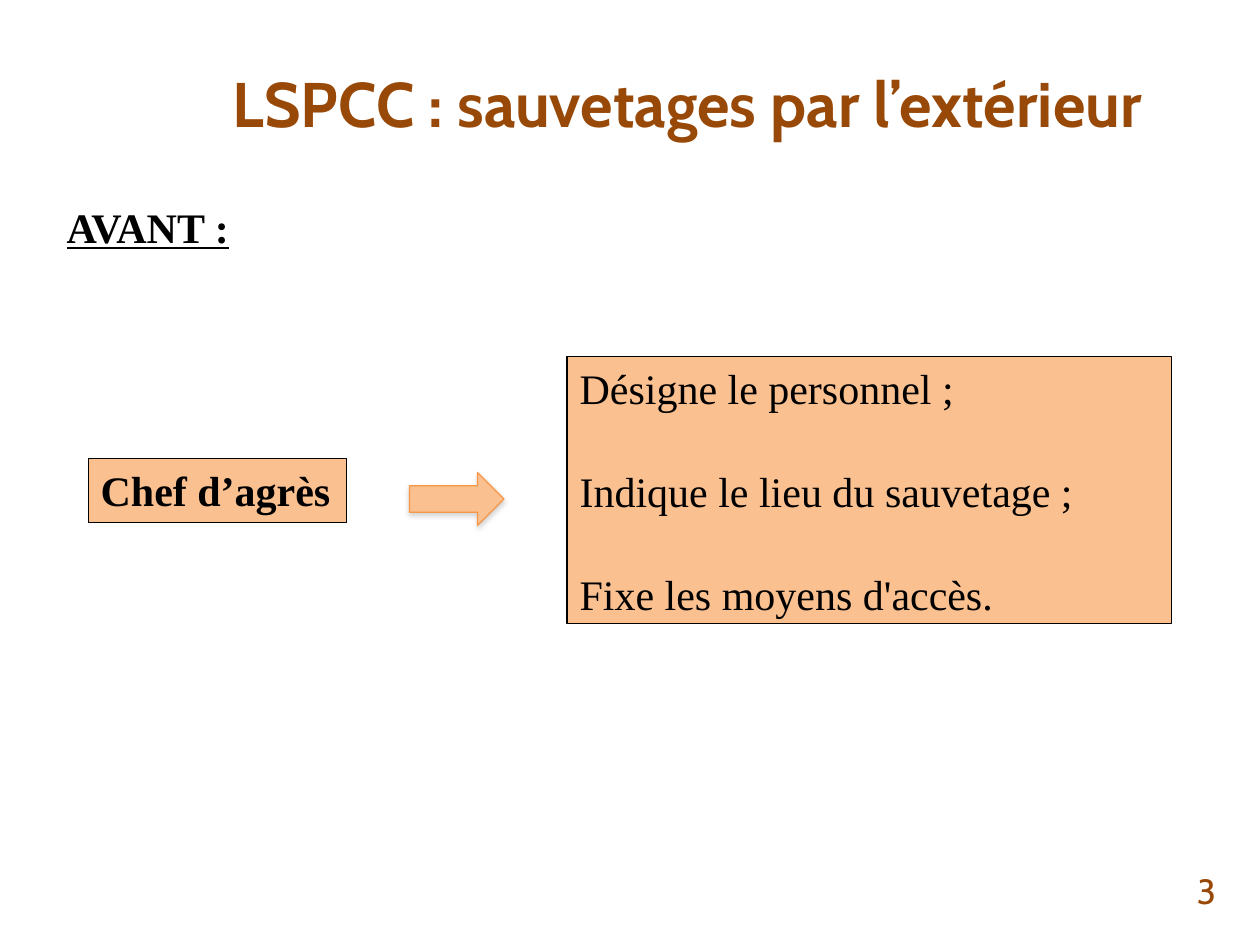
"""Build the slide on rescues from outside a building."""
from dataclasses import dataclass

from lxml import etree
from pptx import Presentation, util as u
from pptx.dml.color import RGBColor
from pptx.enum import shapes, text
from pptx.oxml import parse_xml
from pptx.oxml.ns import nsdecls, qn


@dataclass(frozen=True)
class Theme:
    """Colours, fonts and type sizes of the slide."""
    brown: str = "984807"
    black: str = "000000"
    peach: str = "FAC090"
    orange: str = "F79646"
    shadow: str = "808080"
    heading_font: str = "Cabin"
    body_font: str = "Times New Roman"
    title_size: float = 36
    body_size: float = 24
    number_size: float = 20
    line_width: float = 0.75
    item_gap: float = 30


@dataclass(frozen=True)
class Area:
    """Position and size in inches."""
    left: float
    top: float
    width: float
    height: float

    def lengths(self) -> tuple:
        """Return the four values as lengths."""
        return tuple(map(u.Inches, (self.left, self.top, self.width, self.height)))


@dataclass(frozen=True)
class Label:
    """A short text in a box, filled or plain."""
    words: str
    area: Area
    style: dict
    filled: bool = False
    wrap: bool = False
    anchor: text.MSO_ANCHOR = text.MSO_ANCHOR.TOP


THEME = Theme()
HEADING = dict(font=THEME.heading_font, colour=THEME.brown)
STRONG = dict(bold=True)
LABELS = (
    Label("3", Area(7.42, 6.87, 2.33, 0.4),
          dict(HEADING, size=THEME.number_size, align=text.PP_ALIGN.RIGHT),
          wrap=True, anchor=text.MSO_ANCHOR.MIDDLE),
    Label("AVANT :", Area(0.43, 1.55, 1.51, 0.51), dict(STRONG, underline=True)),
    Label("Chef d’agrès", Area(0.7, 3.64, 2.05, 0.51), STRONG, filled=True),
)
TASKS = (
    "Désigne le personnel ;",
    "Indique le lieu du sauvetage ;",
    "Fixe les moyens d'accès.",
)


def place(box, area: Area) -> None:
    """Move and size a box."""
    box.left, box.top, box.width, box.height = area.lengths()


def paint(box, fill: str, line: str) -> None:
    """Fill and outline a box."""
    box.fill.solid()
    box.fill.fore_color.rgb = RGBColor.from_string(fill)
    box.line.color.rgb = RGBColor.from_string(line)
    box.line.width = u.Pt(THEME.line_width)


def write(para, words: str, *, font: str = THEME.body_font,
          size: float = THEME.body_size, colour: str = THEME.black,
          bold: bool = False, underline: bool = False,
          align: text.PP_ALIGN = text.PP_ALIGN.LEFT, before: float = 0) -> None:
    """Write formatted text into a paragraph."""
    para.alignment = align
    para.space_before = u.Pt(before)
    span = para.add_run()
    span.text = words
    span.font.name = font
    span.font.size = u.Pt(size)
    span.font.bold = bold
    span.font.underline = underline
    span.font.color.rgb = RGBColor.from_string(colour)


def add_title(page, words: str) -> None:
    """Fill the title placeholder."""
    title = page.shapes.title
    place(title, Area(1.22, 0.3, 8.47, 1.03))
    title.text_frame.vertical_anchor = text.MSO_ANCHOR.MIDDLE
    write(title.text_frame.paragraphs[0], words, **HEADING, size=THEME.title_size,
          bold=True, align=text.PP_ALIGN.CENTER)


def add_tasks(page, tasks: tuple[str, ...]) -> None:
    """Fill the body placeholder with unbulleted tasks."""
    body = page.placeholders[1]
    place(body, Area(4.5, 2.83, 4.8, 2.12))
    paint(body, THEME.peach, THEME.black)
    frame = body.text_frame
    frame.auto_size = text.MSO_AUTO_SIZE.NONE
    frame.vertical_anchor = text.MSO_ANCHOR.TOP
    for index, task in enumerate(tasks):
        para = frame.add_paragraph() if index else frame.paragraphs[0]
        properties = para._p.get_or_add_pPr()
        properties.set("marL", "0")
        properties.set("indent", "0")
        etree.SubElement(properties, qn("a:buNone"))
        write(para, task, before=THEME.item_gap if index else 0)


def add_label(page, label: Label) -> None:
    """Draw a label."""
    if label.filled:
        box = page.shapes.add_shape(shapes.MSO_SHAPE.RECTANGLE, *label.area.lengths())
        box.shadow.inherit = False
        paint(box, THEME.peach, THEME.black)
    else:
        box = page.shapes.add_textbox(*label.area.lengths())
    frame = box.text_frame
    frame.word_wrap = label.wrap
    frame.vertical_anchor = label.anchor
    write(frame.paragraphs[0], label.words, **label.style)


def add_arrow(page, area: Area) -> None:
    """Draw the block arrow with its soft shadow."""
    arrow = page.shapes.add_shape(shapes.MSO_SHAPE.RIGHT_ARROW, *area.lengths())
    paint(arrow, THEME.peach, THEME.orange)
    arrow.shadow.inherit = False
    effects = arrow._element.spPr.find(qn("a:effectLst"))
    effects.append(parse_xml(
        f'<a:outerShdw {nsdecls("a")} blurRad="{u.Pt(3.1)}" dist="{u.Pt(1.8)}" '
        f'dir="5400000" rotWithShape="0"><a:srgbClr val="{THEME.shadow}">'
        '<a:alpha val="35000"/></a:srgbClr></a:outerShdw>'))


def main() -> None:
    """Build and save the deck."""
    deck = Presentation()
    deck.slide_width, deck.slide_height = u.Inches(10), u.Inches(7.5)
    page = deck.slides.add_slide(deck.slide_layouts[1])
    add_title(page, "LSPCC : sauvetages par l’extérieur")
    for label in LABELS:
        add_label(page, label)
    add_tasks(page, TASKS)
    add_arrow(page, Area(3.25, 3.75, 0.75, 0.42))
    deck.save("out.pptx")


if __name__ == "__main__":
    main()
